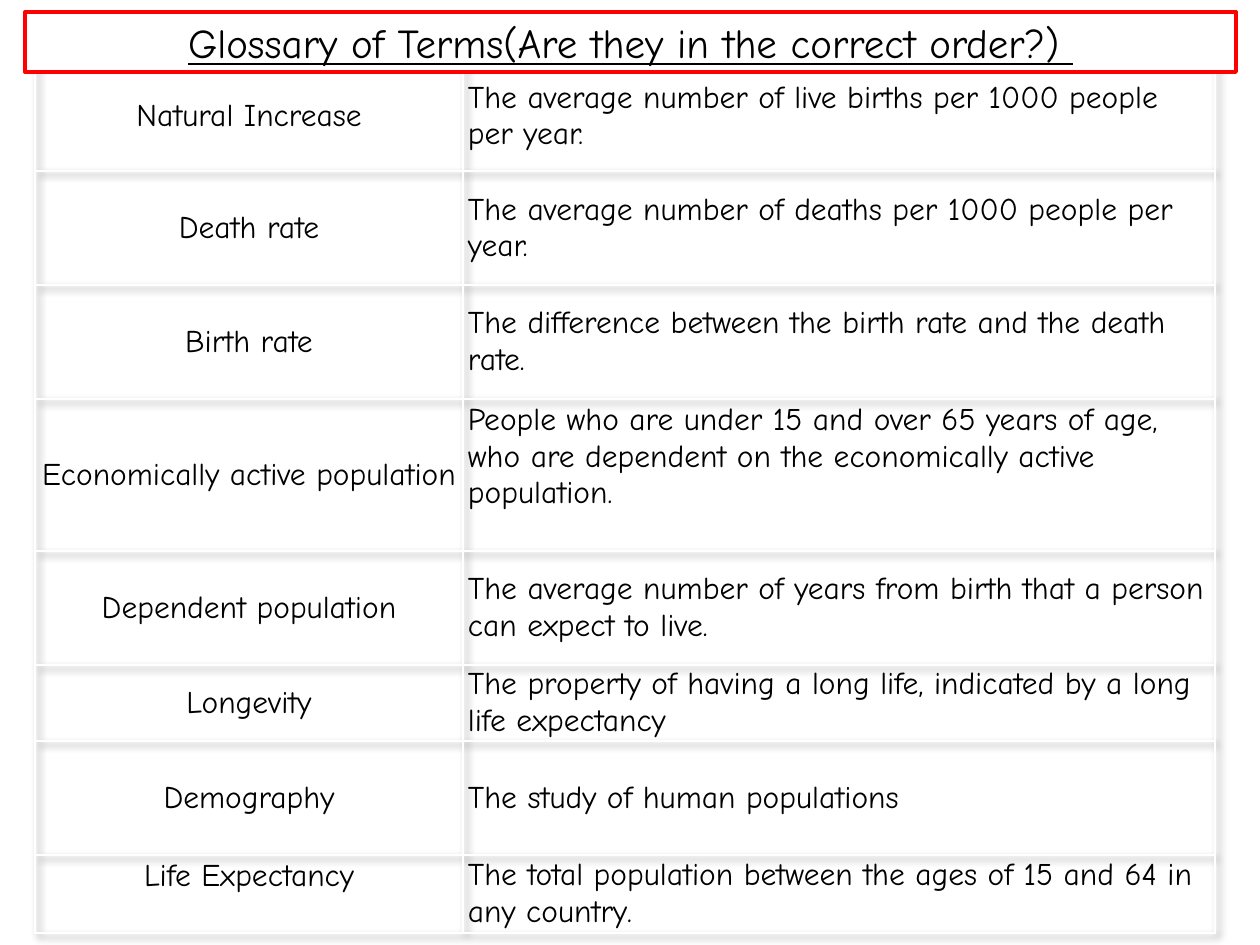
from lxml.etree import SubElement
from pptx import Presentation
from pptx.dml.color import RGBColor
from pptx.enum.text import MSO_ANCHOR, PP_ALIGN
from pptx.oxml import parse_xml
from pptx.oxml.ns import nsdecls, qn
from pptx.util import Pt

SCALE = 914400 / 126
NO_STYLE = "{2D5ABB26-0587-4C30-8999-92F81FD0307C}"

TERMS = [
    ("Natural Increase", "The average number of live births per 1000 people per year."),
    ("Death rate", "The average number of deaths per 1000 people per year."),
    ("Birth rate", "The difference between the birth rate and the death rate."),
    ("Economically active population",
     "People who are under 15 and over 65 years of age, who are dependent "
     "on the economically active population."),
    ("Dependent population",
     "The average number of years from birth that a person can expect to live."),
    ("Longevity",
     "The property of having a long life, indicated by a long life expectancy"),
    ("Demography", "The study of human populations"),
    ("Life Expectancy",
     "The total population between the ages of 15 and 64 in any country."),
]
COLUMNS = [428, 752]
ROWS = [109, 114, 114, 152, 114, 76, 114, 78]
RAISED = {(3, 1): 36, (7, 0): 36}


def px(n):
    return round(n * SCALE)


def rgb(value):
    return RGBColor.from_string(value)


class Deck:
    font = "Comic Neue"
    ink = "000000"
    paper = "FFFFFF"
    accent = "FF0000"

    def __init__(self, width, height):
        self.prs = Presentation()
        self.prs.slide_width = px(width)
        self.prs.slide_height = px(height)
        self.s = self.prs.slides.add_slide(self.prs.slide_layouts[5])

    def add_text(self, tf, text, size, align, underline=None):
        tf.word_wrap = True
        p = tf.paragraphs[0]
        p.alignment = align
        r = p.add_run()
        r.text = text
        r.font.name = self.font
        r.font.size = Pt(size)
        r.font.underline = underline
        r.font.color.rgb = rgb(self.ink)

    def title(self, text, x, y, w, h):
        sp = self.s.shapes.title
        sp.left, sp.top, sp.width, sp.height = map(px, (x, y, w, h))
        sp.fill.solid()
        sp.fill.fore_color.rgb = rgb(self.paper)
        sp.line.color.rgb = rgb(self.accent)
        sp.line.width = Pt(2.25)
        sp.text_frame.vertical_anchor = MSO_ANCHOR.MIDDLE
        self.add_text(sp.text_frame, text, 23.4, PP_ALIGN.CENTER, True)
        sp.element.getparent().append(sp.element)

    def borders(self, cell):
        tcPr = cell._tc.get_or_add_tcPr()
        for i, side in enumerate(("lnL", "lnR", "lnT", "lnB")):
            tcPr.insert(i, parse_xml(
                f'<a:{side} {nsdecls("a")} w="12700"><a:solidFill>'
                f'<a:srgbClr val="{self.paper}"/></a:solidFill></a:{side}>'))

    def shadow(self, table):
        tblPr = table._tbl.tblPr
        tblPr.find(qn("a:tableStyleId")).text = NO_STYLE
        effects = SubElement(tblPr, qn("a:effectLst"))
        outer = SubElement(effects, qn("a:outerShdw"), blurRad="50800",
                           dist="38100", dir="2700000", algn="tl")
        color = SubElement(outer, qn("a:srgbClr"), val=self.ink)
        SubElement(color, qn("a:alpha"), val="40000")
        tblPr.insert(0, effects)

    def table(self, rows, x, y, widths, heights, raised):
        frame = self.s.shapes.add_table(
            len(rows), len(widths), px(x), px(y), px(sum(widths)), px(sum(heights)))
        table = frame.table
        table.first_row = table.horz_banding = False
        self.shadow(table)
        for column, width in zip(table.columns, widths):
            column.width = px(width)
        for i, (row, height) in enumerate(zip(rows, heights)):
            table.rows[i].height = px(height)
            for j, text in enumerate(row):
                cell = table.cell(i, j)
                cell.fill.background()
                cell.vertical_anchor = MSO_ANCHOR.MIDDLE
                cell.margin_left = cell.margin_right = px(5)
                cell.margin_top = 0
                cell.margin_bottom = px(raised.get((i, j), 0))
                align = PP_ALIGN.LEFT if j else PP_ALIGN.CENTER
                self.add_text(cell.text_frame, text, 18, align)
                self.borders(cell)


def main():
    deck = Deck(1260, 945)
    deck.table(TERMS, 35, 62, COLUMNS, ROWS, RAISED)
    deck.title("Glossary of Terms(Are they in the correct order?) ", 25, 12, 1211, 60)
    deck.prs.save("out.pptx")


if __name__ == "__main__":
    main()
